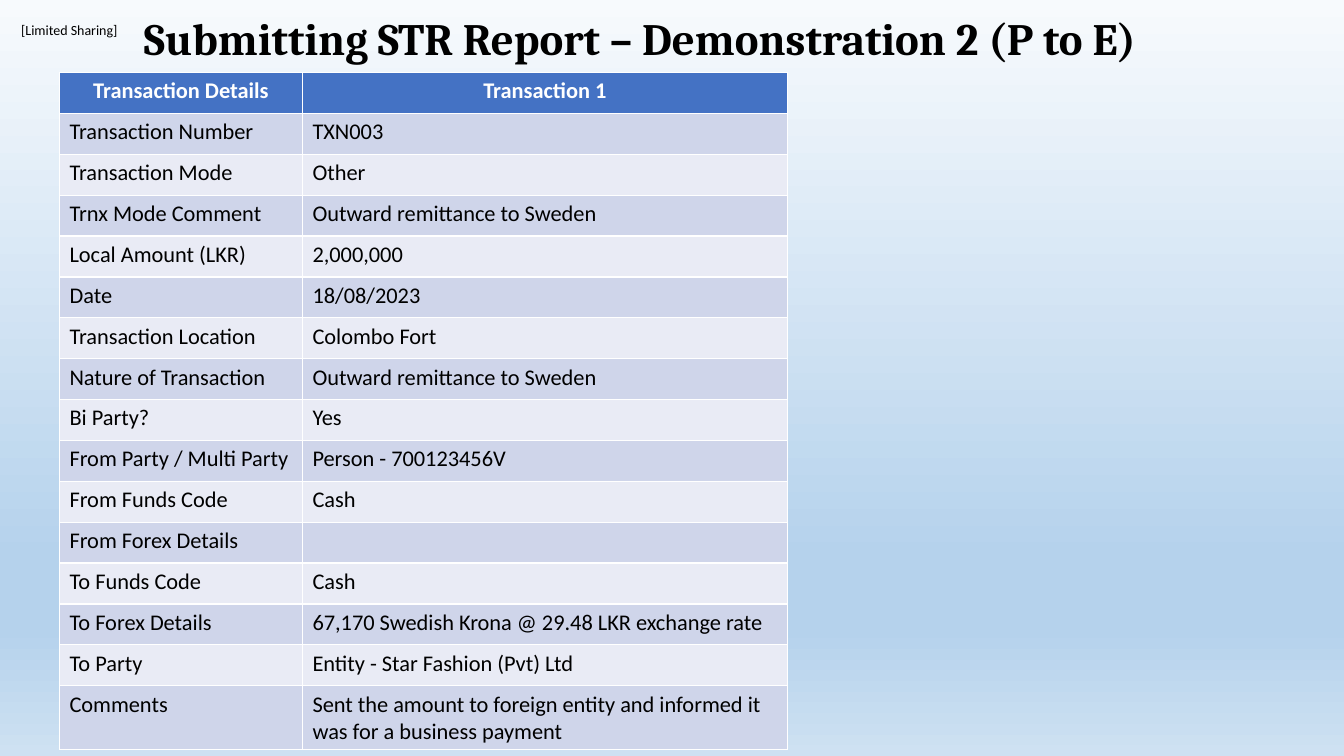
"""Build the STR report demonstration slide with its transaction table."""
import pptx
import pptx.util
import pptx.dml.color
import pptx.enum.text
import pptx.oxml.ns
import lxml.etree

Inches = pptx.util.Inches
Pt = pptx.util.Pt
RGB = pptx.dml.color.RGBColor
ALIGN = pptx.enum.text.PP_ALIGN
ANCHOR = pptx.enum.text.MSO_ANCHOR
qn = pptx.oxml.ns.qn

BLACK = RGB(0x00, 0x00, 0x00)
WHITE = RGB(0xFF, 0xFF, 0xFF)
BLUE = RGB(0x44, 0x72, 0xC4)
DARK = RGB(0xCF, 0xD5, 0xEA)
LIGHT = RGB(0xE9, 0xEB, 0xF5)
SKY = RGB(0xB5, 0xD2, 0xEC)
STOPS = [(0, RGB(0xF7, 0xFA, 0xFD)), (74, SKY), (83, SKY),
         (100, RGB(0xCE, 0xE1, 0xF2))]

ROWS = [
    ("Transaction Details", "Transaction 1"),
    ("Transaction Number", "TXN003"),
    ("Transaction Mode", "Other"),
    ("Trnx Mode Comment", "Outward remittance to Sweden"),
    ("Local Amount (LKR)", "2,000,000"),
    ("Date", "18/08/2023"),
    ("Transaction Location", "Colombo Fort"),
    ("Nature of Transaction", "Outward remittance to Sweden"),
    ("Bi Party?", "Yes"),
    ("From Party / Multi Party", "Person - 700123456V"),
    ("From Funds Code", "Cash"),
    ("From Forex Details", ""),
    ("To Funds Code", "Cash"),
    ("To Forex Details", "67,170 Swedish Krona @ 29.48 LKR exchange rate"),
    ("To Party", "Entity - Star Fashion (Pvt) Ltd"),
    ("Comments", "Sent the amount to foreign entity and informed it "
                 "was for a business payment"),
]


def write(para, text, size, font="Calibri", color=BLACK, bold=False):
    run = para.add_run()
    run.text = text
    run.font.size = Pt(size)
    run.font.name = font
    run.font.bold = bold
    run.font.color.rgb = color


deck = pptx.Presentation()
deck.slide_width = Inches(13.33)
deck.slide_height = Inches(7.5)
slide = deck.slides.add_slide(deck.slide_layouts[6])

back = slide.background.fill
back.gradient()
back.gradient_angle = 270
stops = next(slide.element.iter(qn("a:gsLst")))
for stop in list(stops):
    stops.remove(stop)
for pos, color in STOPS:
    stop = lxml.etree.SubElement(stops, qn("a:gs"), pos=str(pos * 1000))
    lxml.etree.SubElement(stop, qn("a:srgbClr"), val=str(color))

label = slide.shapes.add_textbox(
    Inches(0.21), Inches(0.21), Inches(0.99), Inches(0.17))
frame = label.text_frame
frame.margin_left = frame.margin_right = 0
frame.margin_top = frame.margin_bottom = 0
frame.auto_size = pptx.enum.text.MSO_AUTO_SIZE.SHAPE_TO_FIT_TEXT
write(frame.paragraphs[0], "[Limited Sharing]", 10)

title = slide.shapes.add_textbox(
    Inches(1.33), Inches(0.06), Inches(11.5), Inches(0.7))
frame = title.text_frame
frame.word_wrap = True
frame.vertical_anchor = ANCHOR.MIDDLE
frame.paragraphs[0].line_spacing = 0.9
write(frame.paragraphs[0], "Submitting STR Report – Demonstration 2 (P to E)",
      32, "Cambria", bold=True)

table = slide.shapes.add_table(
    len(ROWS), 2, Inches(0.59), Inches(0.72), Inches(7.22), Inches(6.49)).table
table.columns[0].width = Inches(2.41)
table.columns[1].width = Inches(4.81)
for i, row in enumerate(ROWS):
    head = i == 0
    for j, text in enumerate(row):
        cell = table.cell(i, j)
        cell.fill.solid()
        cell.fill.fore_color.rgb = BLUE if head else DARK if i % 2 else LIGHT
        para = cell.text_frame.paragraphs[0]
        para.alignment = ALIGN.CENTER if head else ALIGN.LEFT
        if text:
            write(para, text, 16, color=WHITE if head else BLACK, bold=head)
        else:
            para.font.size = Pt(16)

deck.save("out.pptx")
